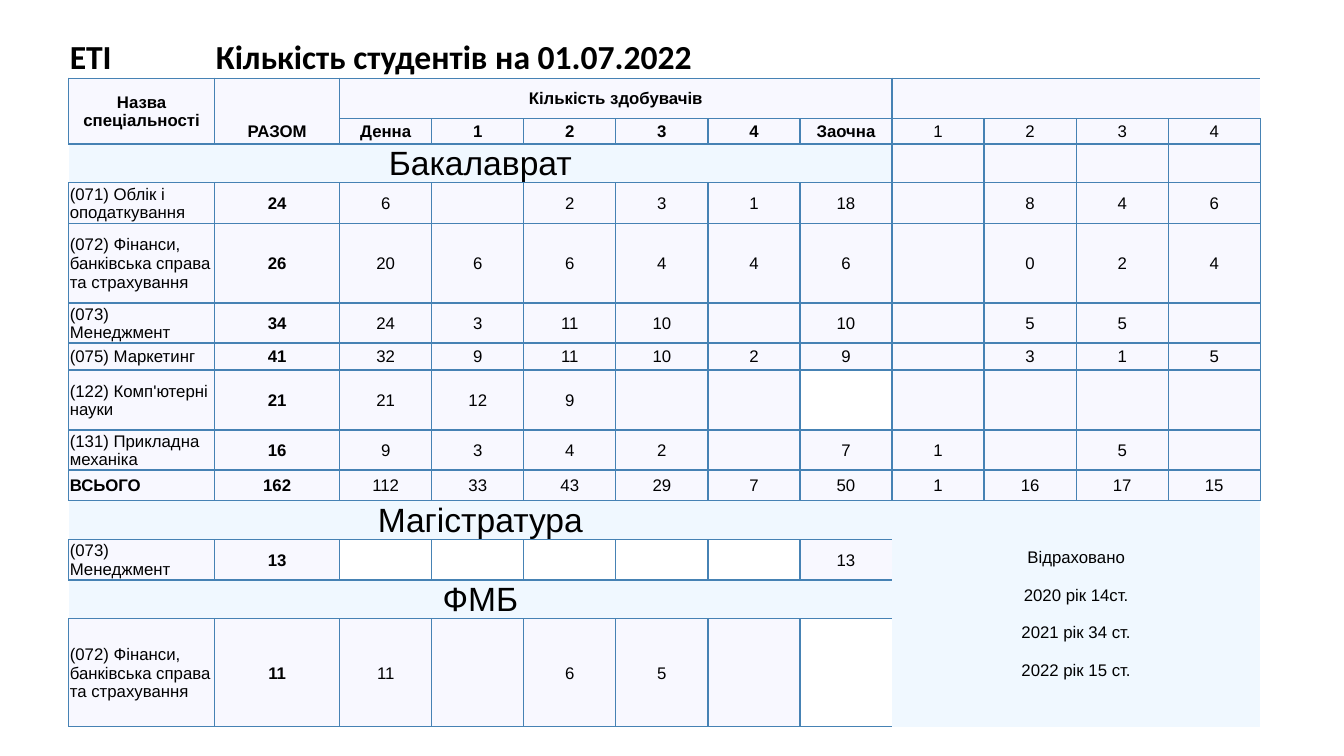
from lxml import etree
from pptx import Presentation
from pptx.dml.color import RGBColor
from pptx.enum.text import MSO_ANCHOR, PP_ALIGN
from pptx.oxml.ns import qn
from pptx.util import Cm, Pt

LEFT, CENTER = PP_ALIGN.LEFT, PP_ALIGN.CENTER
MIDDLE, BOTTOM = MSO_ANCHOR.MIDDLE, MSO_ANCHOR.BOTTOM
COLORS = {"line": "4682B4", "cell": "F8F8FF", "band": "F0F8FF", "text": "000000"}

WIDTHS = [3.68, 3.15] + [2.32] * 10
HEIGHTS = [1.27, 1.02, 0.64, 0.97, 1.02, 2.01, 1.01, 0.68,
           1.51, 1.01, 0.77, 0.99, 1.01, 0.96, 2.72]

ROWS = [
    ["ЕТІ", "Кількість студентів на 01.07.2022"],
    ["Назва спеціальності", "", "Кількість здобувачів"],
    ["", "РАЗОМ", "Денна", 1, 2, 3, 4, "Заочна", 1, 2, 3, 4],
    ["Бакалаврат"],
    ["(071) Облік і оподаткування", 24, 6, "", 2, 3, 1, 18, "", 8, 4, 6],
    ["(072) Фінанси, банківська справа та страхування",
     26, 20, 6, 6, 4, 4, 6, "", 0, 2, 4],
    ["(073) Менеджмент", 34, 24, 3, 11, 10, "", 10, "", 5, 5, ""],
    ["(075) Маркетинг", 41, 32, 9, 11, 10, 2, 9, "", 3, 1, 5],
    ["(122) Комп'ютерні науки", 21, 21, 12, 9],
    ["(131) Прикладна механіка", 16, 9, 3, 4, 2, "", 7, 1, "", 5, ""],
    ["ВСЬОГО", 162, 112, 33, 43, 29, 7, 50, 1, 16, 17, 15],
    ["Магістратура"] + [""] * 7
    + ["Відраховано\n2020 рік 14ст.\n2021 рік 34 ст.\n2022 рік 15 ст."],
    ["(073) Менеджмент", 13, "", "", "", "", "", 13],
    ["ФМБ"],
    ["(072) Фінанси, банківська справа та страхування", 11, 11, "", 6, 5],
]
TITLE, HEAD, TOTAL = 0, (1, 2), 10
BANDS = (3, 11, 13)
NOTE = (11, 8)
SPANS = {
    (0, 1): (1, 6), (1, 0): (2, 1), (1, 2): (1, 6), (1, 8): (1, 4),
    (3, 0): (1, 8), (11, 0): (1, 8), (13, 0): (1, 8), NOTE: (4, 4),
}
SIDES = {
    (1, 1): "LRT", (2, 1): "LRB", (3, 0): "RTB", (11, 0): "TB",
    (13, 0): "TB", NOTE: "T", (12, 7): "LTB", (14, 7): "LTB",
}
BLANK = {(8, 7), (14, 7)} | {(12, col) for col in range(2, 7)}


def set_lines(cell, sides):
    props = cell._tc.get_or_add_tcPr()
    for side in "LRTB":
        line = etree.SubElement(props, qn("a:ln" + side), w=str(Pt(1)))
        if side in sides:
            fill = etree.SubElement(line, qn("a:solidFill"))
            etree.SubElement(fill, qn("a:srgbClr"), val=COLORS["line"])
        else:
            etree.SubElement(line, qn("a:noFill"))


def set_fill(cell, row, col):
    if row == TITLE or (row, col) in BLANK:
        cell.fill.background()
        return
    band = (row in BANDS and col == 0) or (row, col) == NOTE
    cell.fill.solid()
    cell.fill.fore_color.rgb = RGBColor.from_string(COLORS["band" if band else "cell"])


def set_text(cell, text, row, col):
    cell.margin_left = cell.margin_right = cell.margin_top = Cm(0.03)
    cell.margin_bottom = 0
    cell.vertical_anchor = BOTTOM if row == TITLE else MIDDLE
    cell.text = text
    large = row == TITLE or (row in BANDS and col == 0)
    label = row == TITLE or (col == 0 and row not in HEAD + BANDS)
    bold = (row == TITLE or (row in HEAD and col < 8)
            or (col == 1 and row not in BANDS) or (row, col) == (TOTAL, 0))
    for index, para in enumerate(cell.text_frame.paragraphs):
        para.alignment = LEFT if label else CENTER
        para.space_before = Pt(13.3 if index else 0)
        font = para.font
        font.name = "Calibri" if row == TITLE else "Arial"
        font.size = Pt(24 if large else 12)
        font.bold = bold
        font.color.rgb = RGBColor.from_string(COLORS["text"])


def outer(sides, row, col, top, left, high, wide):
    edges = {"L": col == left, "R": col == left + wide - 1,
             "T": row == top, "B": row == top + high - 1}
    return "".join(side for side in sides if edges[side])


def add_block(table, row, col, text):
    high, wide = SPANS.get((row, col), (1, 1))
    sides = SIDES.get((row, col), "B" if row == TITLE else "LRTB")
    first = table.cell(row, col)
    if high * wide > 1:
        first.merge(table.cell(row + high - 1, col + wide - 1))
    for y in range(row, row + high):
        for x in range(col, col + wide):
            cell = table.cell(y, x)
            set_lines(cell, outer(sides, y, x, row, col, high, wide))
            set_fill(cell, row, col)
    set_text(first, text, row, col)


def add_grid(slide):
    frame = slide.shapes.add_table(
        len(HEIGHTS), len(WIDTHS), Cm(1.73), Cm(0.7), Cm(sum(WIDTHS)), Cm(sum(HEIGHTS)))
    table = frame.table
    table.first_row = table.horz_banding = False
    for column, width in zip(table.columns, WIDTHS):
        column.width = Cm(width)
    for line, height in zip(table.rows, HEIGHTS):
        line.height = Cm(height)
    for row, values in enumerate(ROWS):
        for col in range(len(WIDTHS)):
            if not table.cell(row, col).is_spanned:
                text = str(values[col]) if col < len(values) else ""
                add_block(table, row, col, text)


def main():
    deck = Presentation()
    deck.slide_width, deck.slide_height = Cm(33.87), Cm(19.05)
    slide = deck.slides.add_slide(deck.slide_layouts[6])
    add_grid(slide)
    deck.save("out.pptx")


if __name__ == "__main__":
    main()
